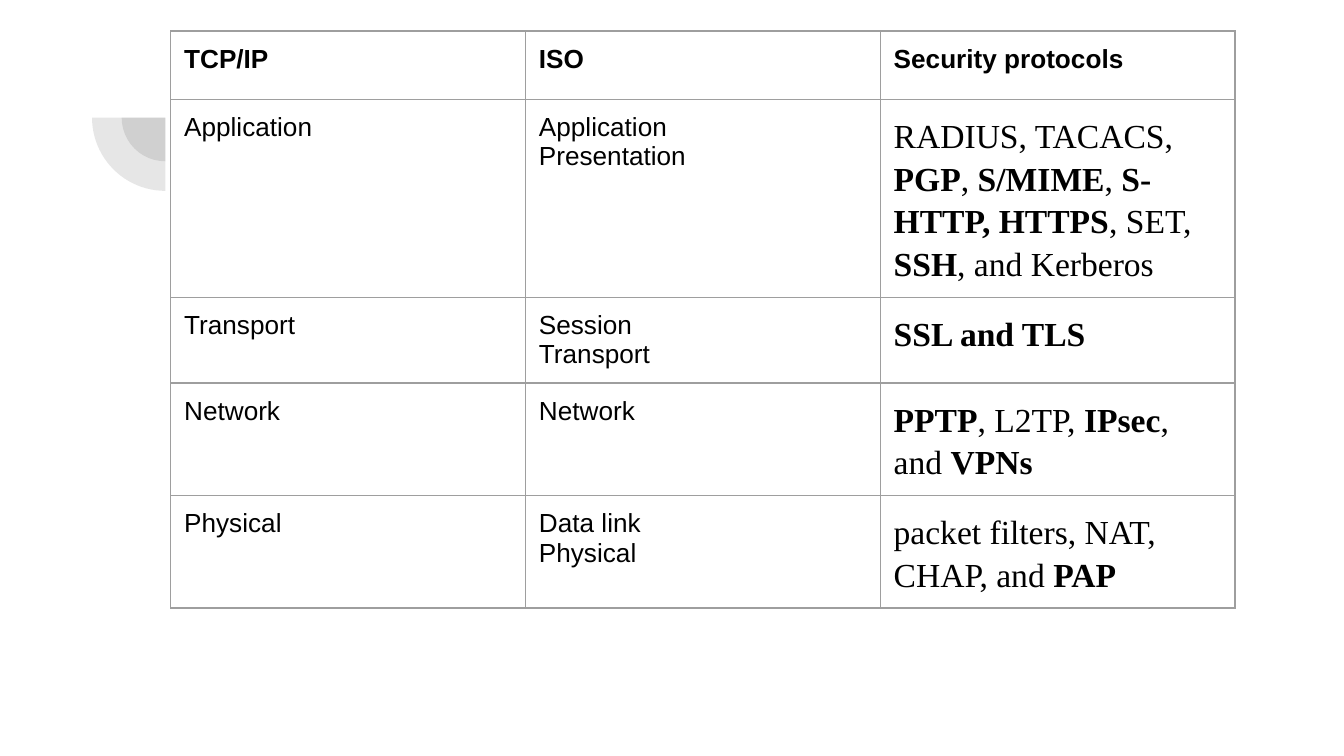
from dataclasses import dataclass

from lxml.etree import SubElement
from pptx import Presentation
from pptx.dml.color import RGBColor
from pptx.enum.shapes import MSO_SHAPE as Shape
from pptx.oxml import parse_xml
from pptx.oxml.ns import nsdecls, qn
from pptx.util import Inches, Pt


@dataclass(frozen=True)
class Theme:
    """Colours, fonts and sizes used on the slide."""
    text: RGBColor = RGBColor(0, 0, 0)
    ornament: RGBColor = RGBColor(0x42, 0x42, 0x42)
    ornament_opacity: int = 13
    border: str = "9E9E9E"
    border_width: float = 0.75
    layer_font: str = "Arial"
    layer_size: int = 14
    protocol_font: str = "Times New Roman"
    protocol_size: int = 18


THEME = Theme()
SLIDE_WIDTH = 10
SLIDE_SIZE = (SLIDE_WIDTH, SLIDE_WIDTH * 9 / 16)
TABLE_ORIGIN = (1.27, 0.23)
COLUMN_WIDTH = 2.64
HEADER_HEIGHT, ROW_HEIGHT = 0.51, 0.42
CELL_MARGIN = 0.1
ORNAMENT_CENTRE = (1.23, 0.875)
ORNAMENT_DIAMETERS = (0.65, 1.09)

HEADINGS = ("TCP/IP", "ISO", "Security protocols")
LAYERS = (
    ("Application", "Application\nPresentation",
     "RADIUS, TACACS, **PGP**, **S/MIME**, **S-HTTP, HTTPS**, SET, **SSH**, and Kerberos"),
    ("Transport", "Session\nTransport", "**SSL and TLS**"),
    ("Network", "Network", "**PPTP**, L2TP, **IPsec**, and **VPNs**"),
    ("Physical", "Data link\nPhysical", "packet filters, NAT, CHAP, and **PAP**"),
)


def add_quarter_disc(slide, diameter):
    """Add a translucent lower-left quarter disc around the ornament centre."""
    left, top = (Inches(centre - diameter / 2) for centre in ORNAMENT_CENTRE)
    disc = slide.shapes.add_shape(Shape.PIE, left, top, Inches(diameter), Inches(diameter))
    disc.adjustments[0], disc.adjustments[1] = 108, 162
    disc.rotation = 270
    disc.shadow.inherit = False
    disc.line.fill.background()
    disc.fill.solid()
    disc.fill.fore_color.rgb = THEME.ornament
    colour = disc.fill._xPr.find(qn("a:solidFill"))[0]
    SubElement(colour, qn("a:alpha")).set("val", str(THEME.ornament_opacity * 1000))


def set_borders(cell):
    """Draw the same thin line on all four sides of a cell."""
    properties = cell._tc.get_or_add_tcPr()
    for index, side in enumerate(("lnL", "lnR", "lnT", "lnB")):
        properties.insert(index, parse_xml(
            f'<a:{side} {nsdecls("a")} w="{Pt(THEME.border_width)}"><a:solidFill>'
            f'<a:srgbClr val="{THEME.border}"/></a:solidFill></a:{side}>'))


def format_cell(cell):
    """Give a cell its margins, empty fill and borders."""
    cell.margin_left = cell.margin_right = Inches(CELL_MARGIN)
    cell.margin_top = cell.margin_bottom = Inches(CELL_MARGIN)
    cell.fill.background()
    set_borders(cell)


def set_font(paragraph, name, size, bold=None):
    """Set the font that all runs of a paragraph share."""
    font = paragraph.font
    font.name, font.size, font.bold = name, Pt(size), bold
    font.color.rgb = THEME.text


def write_layers(cell, text, bold=False):
    """Write a heading or layer names, one paragraph for each line."""
    cell.text = text
    for paragraph in cell.text_frame.paragraphs:
        set_font(paragraph, THEME.layer_font, THEME.layer_size, bold)


def write_protocols(cell, text):
    """Write a protocol list whose starred parts are bold."""
    paragraph = cell.text_frame.paragraphs[0]
    paragraph.line_spacing = 1.15
    paragraph.space_after = Pt(16)
    set_font(paragraph, THEME.protocol_font, THEME.protocol_size)
    for index, part in enumerate(text.split("**")):
        if part:
            run = paragraph.add_run()
            run.text = part
            run.font.bold = index % 2 == 1


def add_protocol_table(slide):
    """Add the table that maps network layers to security protocols."""
    rows, columns = len(LAYERS) + 1, len(HEADINGS)
    left, top = map(Inches, TABLE_ORIGIN)
    height = HEADER_HEIGHT + len(LAYERS) * ROW_HEIGHT
    table = slide.shapes.add_table(
        rows, columns, left, top, Inches(columns * COLUMN_WIDTH), Inches(height)).table
    table.first_row = table.horz_banding = False
    for index, row in enumerate(table.rows):
        row.height = Inches(ROW_HEIGHT if index else HEADER_HEIGHT)
    for cell in table.iter_cells():
        format_cell(cell)
    for column, heading in enumerate(HEADINGS):
        write_layers(table.cell(0, column), heading, bold=True)
    for row, (tcp_ip, iso, protocols) in enumerate(LAYERS, start=1):
        write_layers(table.cell(row, 0), tcp_ip)
        write_layers(table.cell(row, 1), iso)
        write_protocols(table.cell(row, 2), protocols)


def main():
    """Build the slide and save it."""
    presentation = Presentation()
    presentation.slide_width, presentation.slide_height = map(Inches, SLIDE_SIZE)
    slide = presentation.slides.add_slide(presentation.slide_layouts[6])
    for diameter in ORNAMENT_DIAMETERS:
        add_quarter_disc(slide, diameter)
    add_protocol_table(slide)
    presentation.save("out.pptx")


if __name__ == "__main__":
    main()
